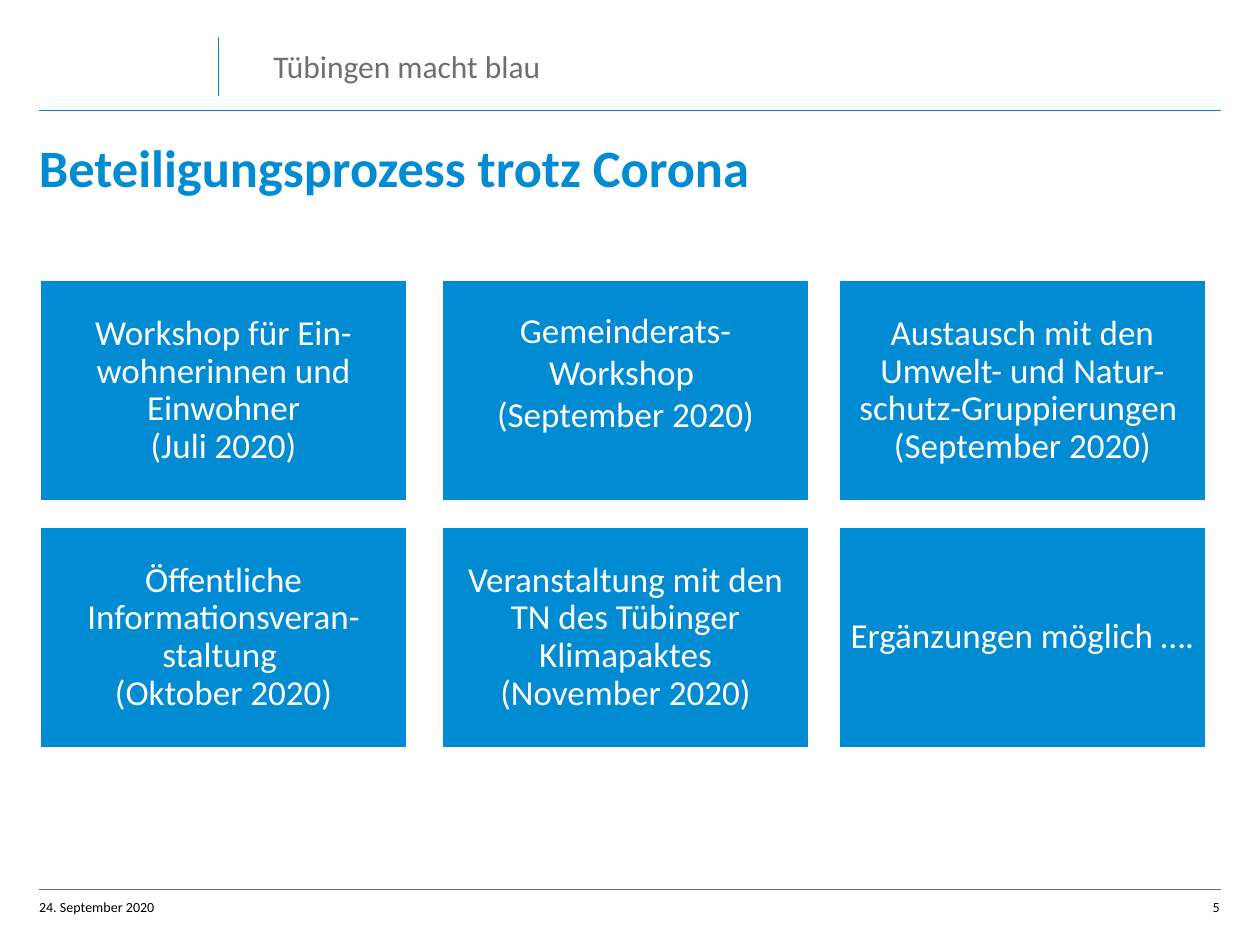
"""Build the slide on the participation process."""
from lxml import etree
from pptx import Presentation
from pptx.dml.color import RGBColor
from pptx.enum import shapes, text
from pptx.oxml import ns
from pptx.util import Inches, Pt

BLUE = RGBColor(0x00, 0x8B, 0xD2)
RULE = RGBColor(0x00, 0x88, 0xCD)
GREY = RGBColor(0x6F, 0x6F, 0x6E)
BLACK = RGBColor(0, 0, 0)
WHITE = RGBColor(255, 255, 255)
LEFT, MID, RIGHT = text.PP_ALIGN.LEFT, text.PP_ALIGN.CENTER, text.PP_ALIGN.RIGHT
TOP, CENTRE = text.MSO_ANCHOR.TOP, text.MSO_ANCHOR.MIDDLE


def write(shape, words, size, color, align, anchor, inset=0, space=1.0, bold=False):
    frame = shape.text_frame
    frame.word_wrap = True
    frame.vertical_anchor = anchor
    frame.margin_left = frame.margin_right = Inches(inset)
    frame.margin_top = frame.margin_bottom = Inches(inset)
    frame.text = words
    for para in frame.paragraphs:
        para.alignment = align
        para.line_spacing = space
        para.font.name = "Calibri"
        para.font.size = Pt(size)
        para.font.bold = bold
        para.font.color.rgb = color
    return frame


deck = Presentation()
deck.slide_width, deck.slide_height = Inches(10), Inches(7.5)
slide = deck.slides.add_slide(deck.slide_layouts[6])

rules = [
    (0.31, 0.88, 9.69, 0.88, RULE),
    (0.31, 7.06, 9.69, 7.06, GREY),
    (1.73, 0.29, 1.73, 0.76, RULE),
]
for *ends, color in rules:
    line = slide.shapes.add_connector(
        shapes.MSO_CONNECTOR.STRAIGHT, *[Inches(end) for end in ends])
    line.line.color.rgb = color
    line.line.width = Pt(0.5)
    etree.SubElement(line._element.spPr, ns.qn("a:effectLst"))

labels = [
    (2.17, 0.29, 6.54, 0.47, "Tübingen macht blau", 18, GREY, LEFT, CENTRE, 0, 1.0, False),
    (0.31, 1.11, 9.37, 0.79, "Beteiligungsprozess trotz Corona", 30, BLUE, LEFT, TOP, 0, 0.95, True),
    (0.31, 7.1, 1.69, 0.2, "24. September 2020", 8, BLACK, LEFT, CENTRE, 0, 1.0, False),
    (9.13, 7.1, 0.55, 0.2, "5", 8, BLACK, RIGHT, CENTRE, 0, 1.0, False),
]
for x, y, wide, high, *style in labels:
    box = slide.shapes.add_textbox(Inches(x), Inches(y), Inches(wide), Inches(high))
    write(box, *style)

steps = [
    ["Workshop für Ein-wohnerinnen und Einwohner\v(Juli 2020)",
     "Gemeinderats-\nWorkshop \v(September 2020)",
     "Austausch mit den Umwelt- und Natur-schutz-Gruppierungen \v(September 2020)"],
    ["Öffentliche Informationsveran-staltung \v(Oktober 2020)",
     "Veranstaltung mit den TN des Tübinger Klimapaktes\v(November 2020)",
     "Ergänzungen möglich …."],
]
for y, row in zip((2.22, 4.18), steps):
    for x, words in zip((0.31, 3.5, 6.65), row):
        card = slide.shapes.add_shape(
            shapes.MSO_SHAPE.RECTANGLE, Inches(x), Inches(y), Inches(2.93), Inches(1.76))
        card.shadow.inherit = False
        card.fill.solid()
        card.fill.fore_color.rgb = BLUE
        card.line.color.rgb = WHITE
        card.line.width = Pt(2)
        split = "\n" in words
        frame = write(card, words, 20, WHITE, MID, CENTRE, 0.08, 1.0 if split else 0.9)
        if split:
            frame.margin_bottom = Inches(0.38)

deck.save("out.pptx")
